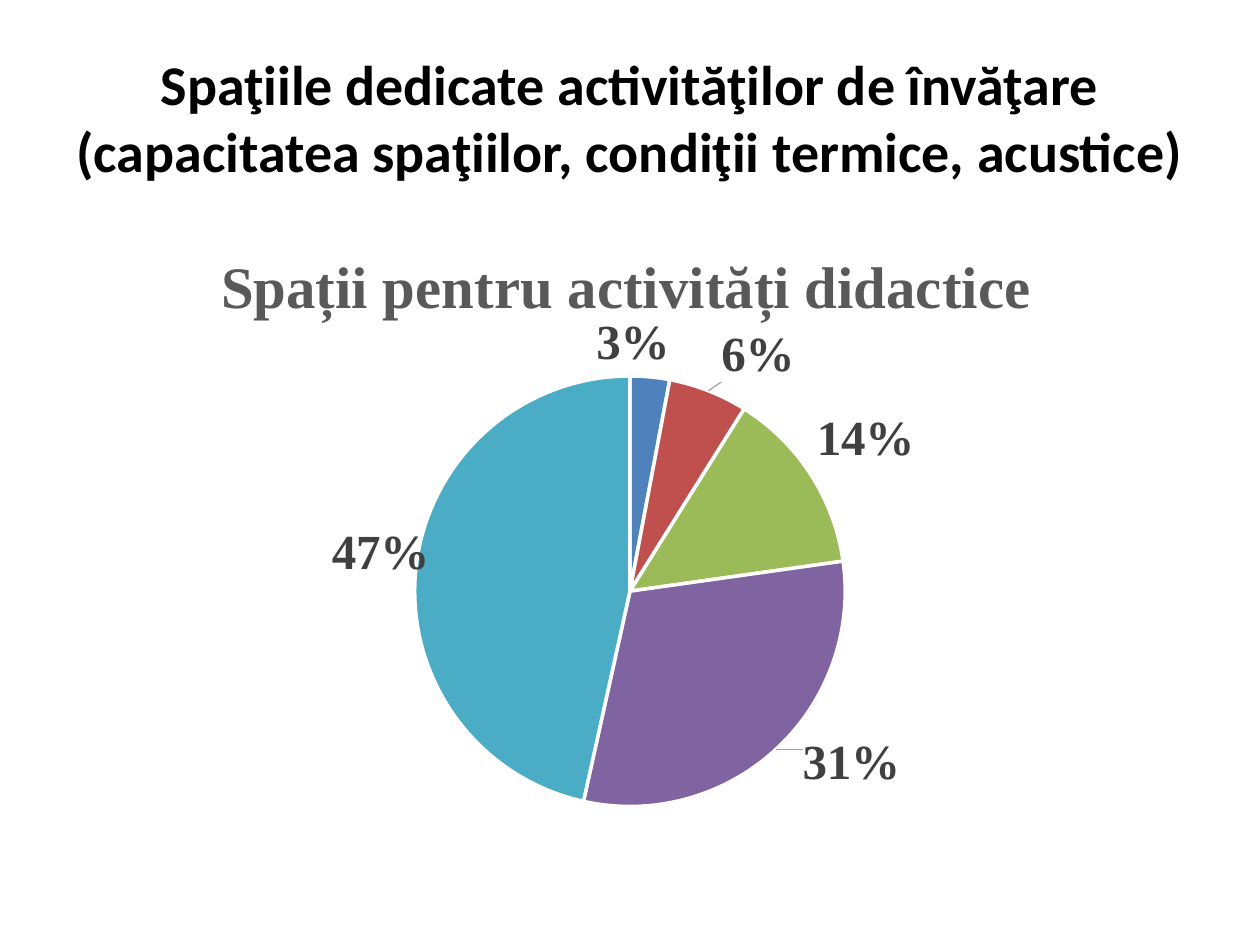
from copy import deepcopy
from dataclasses import dataclass

from pptx import Presentation
from pptx import oxml
from pptx import util as u
from pptx.chart import data as chart_data
from pptx.dml import color
from pptx.enum import chart as ch
from pptx.enum import text
from pptx.oxml import ns

PX = u.Inches(1) / 126


@dataclass(frozen=True)
class Theme:
    """Colours, fonts and type sizes of the slide."""
    ink: str = "000000"
    chart_title: str = "595959"
    label: str = "404040"
    leader: str = "A6A6A6"
    edge: str = "FFFFFF"
    slices: tuple = ("4F81BD", "C0504D", "9BBB59", "8064A2", "4BACC6")
    heading_font: str = "Calibri"
    chart_font: str = "Times New Roman"
    heading_size: float = 32
    chart_title_size: float = 33.6
    label_size: float = 28


THEME = Theme()


def px(length):
    """Turn px into EMU."""
    return u.Emu(round(length * PX))


def rgb(value):
    """Turn a hex string into a colour."""
    return color.RGBColor.from_string(value)


def style(font, name, size, ink):
    """Set a bold font."""
    font.name = name
    font.size = u.Pt(size)
    font.bold = True
    font.color.rgb = rgb(ink)


def layout(x, y, extra=""):
    """Return a manual chart layout element."""
    return oxml.parse_xml(
        f'<c:layout {ns.nsdecls("c")}><c:manualLayout>{extra}'
        f'<c:x val="{x:.3f}"/><c:y val="{y:.3f}"/></c:manualLayout></c:layout>')


def heading(slide, box, wording):
    """Place the slide heading in its box."""
    frame = slide.shapes.add_textbox(*map(px, box)).text_frame
    frame.word_wrap = True
    frame.vertical_anchor = text.MSO_ANCHOR.MIDDLE
    paragraph = frame.paragraphs[0]
    paragraph.alignment = text.PP_ALIGN.CENTER
    run = paragraph.add_run()
    run.text = wording
    style(run.font, THEME.heading_font, THEME.heading_size, THEME.ink)


def place_title(chart, wording):
    """Write the chart title and set its position."""
    run = chart.chart_title.text_frame.paragraphs[0].add_run()
    run.text = wording
    style(run.font, THEME.chart_font, THEME.chart_title_size, THEME.chart_title)
    title = chart._chartSpace.chart.find(ns.qn("c:title"))
    for old in title.findall(ns.qn("c:layout")):
        title.remove(old)
    modes = '<c:xMode val="edge"/><c:yMode val="edge"/>'
    title.find(ns.qn("c:tx")).addnext(layout(0.13, 0.03, modes))
    chart.chart_title.include_in_layout = False


def place_plot(chart):
    """Fix the inner plot area within the chart."""
    area = chart._chartSpace.chart.plotArea
    for old in area.findall(ns.qn("c:layout")):
        area.remove(old)
    modes = ('<c:layoutTarget val="inner"/>'
             '<c:xMode val="edge"/><c:yMode val="edge"/>')
    placed = layout(0.03, 0.25, modes)
    for tag, share in (("w", 0.94), ("h", 0.69)):
        placed[0].append(oxml.parse_xml(
            f'<c:{tag} {ns.nsdecls("c")} val="{share}"/>'))
    area.insert(0, placed)


def percent_labels(series, box, shifts):
    """Show percentages, each shifted from the slice's outer end."""
    labels = series.data_labels
    labels.show_percentage = True
    labels.show_value = False
    labels.number_format = "0%"
    labels.number_format_is_linked = False
    labels.position = ch.XL_LABEL_POSITION.OUTSIDE_END
    style(labels.font, THEME.chart_font, THEME.label_size, THEME.label)
    group = labels._element
    text_style = group.find(ns.qn("c:txPr"))
    flags = "".join(
        f'<c:show{flag} val="{int(flag == "Percent")}"/>'
        for flag in ("LegendKey", "Val", "CatName", "SerName", "Percent", "BubbleSize"))
    for index, (dx, dy) in enumerate(shifts):
        label = oxml.parse_xml(
            f'<c:dLbl {ns.nsdecls("c")}><c:idx val="{index}"/>'
            f'<c:dLblPos val="outEnd"/>{flags}</c:dLbl>')
        label.insert(1, layout(dx / box[2], dy / box[3]))
        label.insert(2, deepcopy(text_style))
        group.insert(index, label)
    group.append(oxml.parse_xml(
        f'<c:leaderLines {ns.nsdecls("c", "a")}><c:spPr><a:ln w="9525"><a:solidFill>'
        f'<a:srgbClr val="{THEME.leader}"/></a:solidFill></a:ln></c:spPr></c:leaderLines>'))


def share_pie(slide, box, wording, shares, shifts):
    """Place the pie of teaching spaces in its box."""
    spaces = chart_data.CategoryChartData()
    spaces.categories = [str(n) for n in range(1, len(shares) + 1)]
    spaces.add_series(wording, shares)
    chart = slide.shapes.add_chart(
        ch.XL_CHART_TYPE.PIE, *map(px, box), spaces).chart
    style(chart.font, THEME.chart_font, THEME.label_size, THEME.ink)
    chart.has_legend = False
    place_title(chart, wording)
    place_plot(chart)
    pie = chart.plots[0]
    pie.vary_by_categories = True
    series = pie.series[0]
    for index, fill in enumerate(THEME.slices):
        wedge = series.points[index].format
        wedge.fill.solid()
        wedge.fill.fore_color.rgb = rgb(fill)
        wedge.line.color.rgb = rgb(THEME.edge)
        wedge.line.width = u.Pt(2)
    percent_labels(series, box, shifts)


def main():
    """Build and save the slide."""
    deck = Presentation()
    deck.slide_width, deck.slide_height = px(1260), px(945)
    slide = deck.slides.add_slide(deck.slide_layouts[6])
    heading(slide, (63, 38, 1134, 157),
            "Spaţiile dedicate activităţilor de învăţare "
            "(capacitatea spaţiilor, condiţii termice, acustice)")
    share_pie(slide, (63, 220, 1134, 624), "Spații pentru activități didactice",
              (3, 6, 14, 31, 47),
              ((-54, 0), (10, -2), (0, -4), (21, -18), (20, 13)))
    deck.save("out.pptx")


if __name__ == "__main__":
    main()
